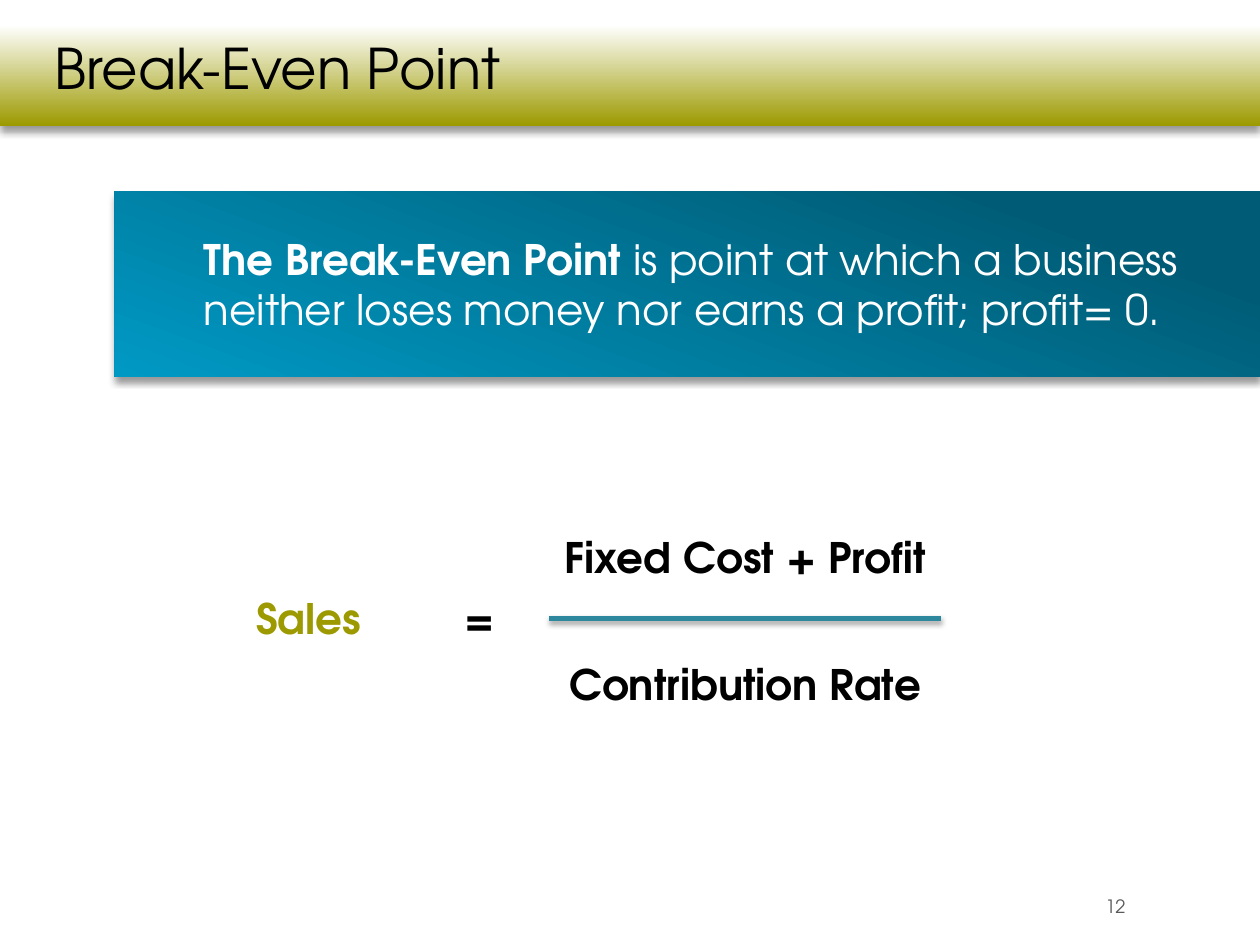
from typing import NamedTuple

from lxml.etree import SubElement
from pptx import Presentation
from pptx.dml.color import RGBColor
from pptx.enum.shapes import MSO_CONNECTOR as Connector, MSO_SHAPE as Preset
from pptx.enum.text import MSO_ANCHOR as Anchor, MSO_AUTO_SIZE as AutoSize, PP_ALIGN as Align
from pptx.oxml.ns import qn
from pptx.util import Cm, Pt

FONT = "TeX Gyre Adventor"
OLIVE, TEAL, BLACK, WHITE, GREY = "9C9A00", "2D879D", "000000", "FFFFFF", "595959"


class Box(NamedTuple):
    left: float
    top: float
    width: float
    height: float


class Stop(NamedTuple):
    position: float
    color: str


class Band(NamedTuple):
    box: Box
    stops: tuple[Stop, Stop]
    angle: float


class Term(NamedTuple):
    text: str
    center: float
    top: float
    width: float
    color: str = BLACK


TITLE_BAND = Band(Box(0, 0, 25.4, 2.54), (Stop(0.2, WHITE), Stop(1, OLIVE)), 270)
DEFINITION_BAND = Band(Box(2.31, 3.86, 23.09, 3.73), (Stop(0.17, "005C76"), Stop(1, "0099C4")), 250)

FRACTION_CENTER, FRACTION_WIDTH = 15.02, 7.9
BAR_Y, TERM_HEIGHT = 12.47, 1.3
MIDDLE_TOP = BAR_Y - TERM_HEIGHT / 2
TERMS = (
    Term("Sales", 6.22, MIDDLE_TOP, 2.64, OLIVE),
    Term("Fixed Cost + Profit", FRACTION_CENTER, 10.59, 7.8),
    Term("Contribution Rate", FRACTION_CENTER, 13.16, 7.67),
    Term("=", 9.63, MIDDLE_TOP, 1.02),
)


def rgb(color: str) -> RGBColor:
    """Turn a hex string into a colour."""
    return RGBColor.from_string(color)


def lengths(box: Box) -> list[Cm]:
    """Turn a box into left, top, width and height."""
    return [Cm(value) for value in box]


def format_run(run, size: float, color: str, bold: bool = False) -> None:
    """Give a run its font, size, colour and weight."""
    run.font.name = FONT
    run.font.size = Pt(size)
    run.font.bold = bold
    run.font.color.rgb = rgb(color)


def add_shadow(shape, alpha: int, blur: float, distance: float) -> None:
    """Cast a black shadow straight down."""
    properties = shape.element.spPr
    effects = properties.find(qn("a:effectLst"))
    if effects is None:
        effects = SubElement(properties, qn("a:effectLst"))
    shadow = SubElement(
        effects, qn("a:outerShdw"), blurRad=str(Pt(blur)), dist=str(Pt(distance)),
        dir="5400000", rotWithShape="0",
    )
    color = SubElement(shadow, qn("a:srgbClr"), val=BLACK)
    SubElement(color, qn("a:alpha"), val=str(alpha * 1000))


def add_band(slide, band: Band):
    """Draw a shadowed rectangle with a two-stop gradient."""
    shape = slide.shapes.add_shape(Preset.RECTANGLE, *lengths(band.box))
    shape.fill.gradient()
    shape.fill.gradient_angle = band.angle
    for gradient_stop, stop in zip(shape.fill.gradient_stops, band.stops):
        gradient_stop.color.rgb = rgb(stop.color)
        gradient_stop.position = stop.position
    shape.line.fill.background()
    shape.shadow.inherit = False
    add_shadow(shape, 40, 4, 3)
    return shape


def add_text(slide, box: Box, text: str, size: float, color: str,
             align: Align = Align.LEFT, bold: bool = False, anchor: Anchor = Anchor.MIDDLE,
             wrap: bool = True):
    """Add a text box of one paragraph and return the paragraph."""
    frame = slide.shapes.add_textbox(*lengths(box)).text_frame
    frame.word_wrap = wrap
    frame.vertical_anchor = anchor
    frame.text = text
    paragraph = frame.paragraphs[0]
    paragraph.alignment = align
    format_run(paragraph.runs[0], size, color, bold)
    return paragraph


def add_term(slide, term: Term) -> None:
    """Write one term of the formula around its centre."""
    box = Box(term.center - term.width / 2, term.top, term.width, TERM_HEIGHT)
    add_text(slide, box, term.text, 24, term.color, Align.CENTER, True, Anchor.TOP, False)


def add_title(slide, text: str) -> None:
    """Set the title on its gradient band."""
    title = slide.shapes.title
    title.left, title.top, title.width, title.height = lengths(Box(0.84, 0, 23.7, 2.54))
    frame = title.text_frame
    frame.text = text
    frame.auto_size = AutoSize.NONE
    frame.vertical_anchor = Anchor.MIDDLE
    frame.margin_top = Cm(0.56)
    paragraph = frame.paragraphs[0]
    paragraph.alignment = Align.LEFT
    paragraph.line_spacing = 0.8
    format_run(paragraph.runs[0], 32, BLACK)
    title.element.addprevious(add_band(slide, TITLE_BAND).element)


def add_definition(slide) -> None:
    """Set the definition on its gradient band."""
    add_band(slide, DEFINITION_BAND)
    paragraph = add_text(slide, Box(3.86, 4.67, 21.49, 2.11), "The Break-Even Point ", 24, WHITE, bold=True)
    run = paragraph.add_run()
    run.text = "is point at which a business neither loses money nor earns a profit; profit= 0."
    format_run(run, 24, WHITE)


def add_fraction_bar(slide) -> None:
    """Draw the line between numerator and denominator."""
    start = FRACTION_CENTER - FRACTION_WIDTH / 2
    bar = slide.shapes.add_connector(
        Connector.STRAIGHT, Cm(start), Cm(BAR_Y), Cm(start + FRACTION_WIDTH), Cm(BAR_Y)
    )
    bar.line.color.rgb = rgb(TEAL)
    bar.line.width = Pt(3)
    add_shadow(bar, 35, 3.1, 1.8)


def main() -> None:
    """Build and save the slide."""
    presentation = Presentation()
    presentation.slide_width, presentation.slide_height = Cm(25.4), Cm(19.05)
    slide = presentation.slides.add_slide(presentation.slide_layouts[5])
    add_title(slide, "Break-Even Point")
    add_text(slide, Box(19.94, 17.75, 3, 1.02), "12", 10.5, GREY, Align.RIGHT)
    add_definition(slide)
    for term in TERMS:
        add_term(slide, term)
    add_fraction_bar(slide)
    presentation.save("out.pptx")


if __name__ == "__main__":
    main()
